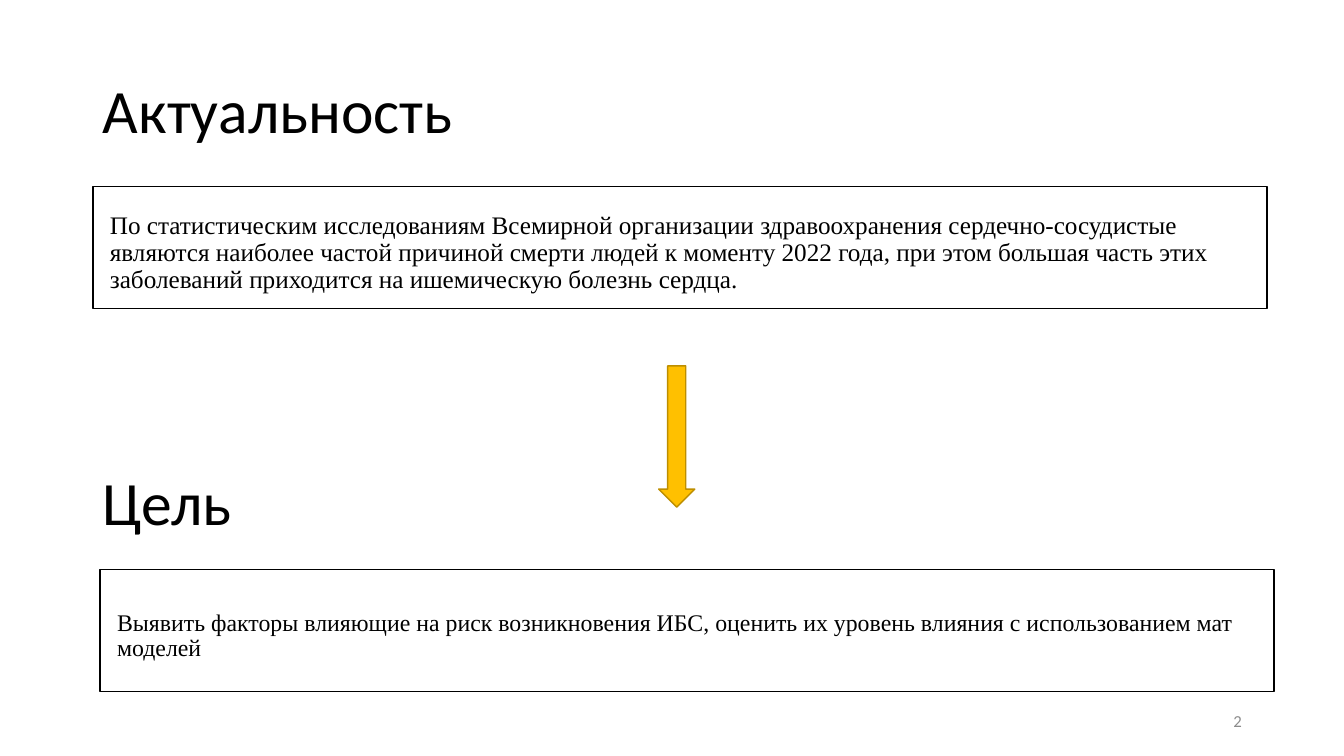
from pptx import Presentation
from pptx import util as u
from pptx.dml.color import RGBColor
from pptx.enum import shapes, text

BLACK = RGBColor(0x00, 0x00, 0x00)
GREY = RGBColor(0x8C, 0x8C, 0x8C)
GOLD = RGBColor(0xFF, 0xC0, 0x00)
DARK_GOLD = RGBColor(0xBD, 0x8E, 0x00)

TEXT_W = 29.21
HEADING = dict(size=u.Pt(44), name="Calibri")
BODY = dict(name="Times New Roman")
NUMBER = dict(size=u.Pt(12), name="Calibri")


def place(sp, x, y, w, h):
    sp.left, sp.top, sp.width, sp.height = (u.Cm(v) for v in (x, y, w, h))


def write(sp, content, font, color=BLACK, anchor=text.MSO_ANCHOR.MIDDLE, **paragraph):
    tf = sp.text_frame
    tf.word_wrap = True
    tf.auto_size = text.MSO_AUTO_SIZE.NONE
    tf.vertical_anchor = anchor
    p = tf.paragraphs[0]
    for key, value in {"alignment": text.PP_ALIGN.LEFT, **paragraph}.items():
        setattr(p, key, value)
    r = p.add_run()
    r.text = content
    for key, value in font.items():
        setattr(r.font, key, value)
    r.font.color.rgb = color


def add_text(s, x, y, w, h, *args, **kwargs):
    sp = s.shapes.add_textbox(*(u.Cm(v) for v in (x, y, w, h)))
    write(sp, *args, **kwargs)


def add_outlined(s, kind, x, y, w, h, line, fill=None):
    sp = s.shapes.add_shape(kind, *(u.Cm(v) for v in (x, y, w, h)))
    sp.shadow.inherit = False
    if fill is None:
        sp.fill.background()
    else:
        sp.fill.solid()
        sp.fill.fore_color.rgb = fill
    sp.line.color.rgb = line
    sp.line.width = u.Pt(1)


def add_framed_text(s, x, y, inset_top, height, content, size):
    """Draw a frame at x, y and its text inset_top below the frame's top."""
    add_outlined(s, shapes.MSO_SHAPE.RECTANGLE, x, y, 29.59, 3.07, BLACK)
    add_text(s, x + 0.18, y + inset_top, TEXT_W, height, content,
             dict(BODY, size=u.Pt(size)), anchor=text.MSO_ANCHOR.TOP,
             line_spacing=0.9, space_before=u.Pt(10))


def add_relevance(s, x, y):
    title = s.shapes.title
    place(title, x, y, TEXT_W, 3.68)
    write(title, "Актуальность", HEADING, line_spacing=0.9)
    add_framed_text(
        s, x, y + 3.68, 0.53, 2.54,
        "По статистическим исследованиям Всемирной организации здравоохранения "
        "сердечно-сосудистые являются наиболее частой причиной смерти людей к "
        "моменту 2022 года, при этом большая часть этих заболеваний приходится "
        "на ишемическую болезнь сердца.", 18)


def add_goal(s, x, y):
    add_text(s, x, y, TEXT_W, 3.68, "Цель", HEADING, line_spacing=0.9)
    add_framed_text(
        s, x + 0.18, y + 3.45, 0.91, 1.93,
        "Выявить факторы влияющие на риск возникновения ИБС, оценить их "
        "уровень влияния с использованием мат моделей", 17)


def main():
    prs = Presentation()
    prs.slide_width, prs.slide_height = u.Cm(33.87), u.Cm(19.05)
    s = prs.slides.add_slide(prs.slide_layouts[5])
    add_relevance(s, 2.34, 1.02)
    add_outlined(s, shapes.MSO_SHAPE.DOWN_ARROW, 16.6, 9.22, 0.91, 3.56,
                 DARK_GOLD, GOLD)
    add_goal(s, 2.34, 10.9)
    add_text(s, 23.93, 17.65, 7.62, 1.02, "2", NUMBER, GREY,
             alignment=text.PP_ALIGN.RIGHT)
    prs.save("out.pptx")


if __name__ == "__main__":
    main()
